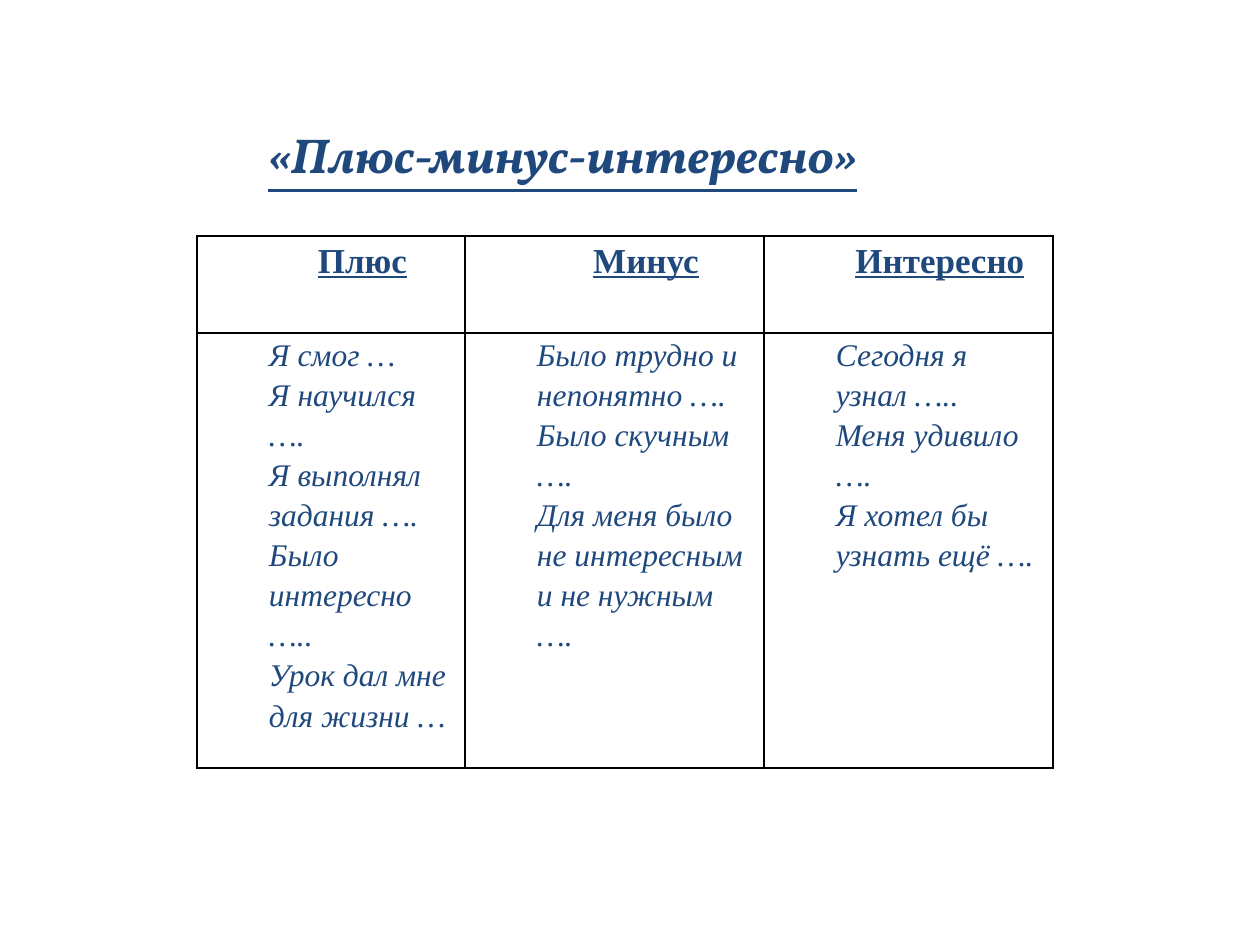
import pptx
import pptx.dml.color
import pptx.enum.text
import pptx.oxml
import pptx.oxml.ns
import pptx.util

PX = 914400 // 126
BLUE = "1F497D"
BLACK = "000000"
HEADERS = ["Плюс", "Минус", "Интересно"]
ANSWERS = [
    ["Я смог …", "Я научился ….", "Я выполнял задания ….",
     "Было интересно …..", "Урок дал мне для жизни …"],
    ["Было трудно и непонятно ….", "Было скучным ….",
     "Для меня было не интересным и не нужным …."],
    ["Сегодня я узнал …..", "Меня удивило ….", "Я хотел бы узнать ещё …."],
]
COLUMNS = [268, 299, 289]
ROWS = [97, 435]
TITLE_FONT = {"name": "Vollkorn", "size": pptx.util.Pt(28), "bold": True,
              "italic": True, "underline": True}
HEADER_FONT = {"name": "Times New Roman", "size": pptx.util.Pt(20),
               "bold": True, "italic": False, "underline": True}
ANSWER_FONT = {"name": "Times New Roman", "size": pptx.util.Pt(18),
               "bold": False, "italic": True, "underline": False}


def px(n):
    """Turn whole pixels into EMU."""
    return pptx.util.Emu(n * PX)


def color(value):
    """Turn a hex string into a colour."""
    return pptx.dml.color.RGBColor.from_string(value)


def set_format(target, values):
    """Set attributes of an object from a dict."""
    for name, value in values.items():
        setattr(target, name, value)


def add_run(p, text, font):
    """Add a blue run with the given font values."""
    r = p.add_run()
    r.text = text
    set_format(r.font, font)
    r.font.color.rgb = color(BLUE)


def add_title(s, text, x, y, w, h):
    """Add the title text box."""
    tf = s.shapes.add_textbox(px(x), px(y), px(w), px(h)).text_frame
    tf.word_wrap = True
    add_run(tf.paragraphs[0], text, TITLE_FONT)


def set_borders(cell):
    """Draw a thin black line on each side of a cell."""
    tcPr = cell._tc.get_or_add_tcPr()
    for i, side in enumerate(["lnL", "lnR", "lnT", "lnB"]):
        tcPr.insert(i, pptx.oxml.parse_xml(
            f'<a:{side} {pptx.oxml.ns.nsdecls("a")} w="12700"><a:solidFill>'
            f'<a:srgbClr val="{BLACK}"/></a:solidFill></a:{side}>'))


def fill_cell(cell, lines, font, align):
    """Write indented lines into a bordered cell without fill."""
    set_format(cell, {"margin_left": px(9), "margin_right": px(9),
                      "margin_top": 0, "margin_bottom": 0})
    cell.fill.background()
    set_borders(cell)
    tf = cell.text_frame
    for i, line in enumerate(lines):
        p = tf.add_paragraph() if i else tf.paragraphs[0]
        p._p.get_or_add_pPr().set("marL", str(px(63)))
        set_format(p, {"alignment": align, "line_spacing": 1.15})
        add_run(p, line, font)


def add_reflection_table(s, x, y):
    """Add the table of headers and unfinished sentences."""
    table = s.shapes.add_table(len(ROWS), len(COLUMNS), px(x), px(y),
                               px(sum(COLUMNS)), px(sum(ROWS))).table
    set_format(table, {"first_row": False, "horz_banding": False})
    for column, w in zip(table.columns, COLUMNS):
        column.width = px(w)
    for row, h in zip(table.rows, ROWS):
        row.height = px(h)
    align = pptx.enum.text.PP_ALIGN
    for i, (header, lines) in enumerate(zip(HEADERS, ANSWERS)):
        fill_cell(table.cell(0, i), [header], HEADER_FONT, align.CENTER)
        fill_cell(table.cell(1, i), lines, ANSWER_FONT, align.LEFT)


def main():
    """Build and save the slide."""
    prs = pptx.Presentation()
    set_format(prs, {"slide_width": px(1260), "slide_height": px(945)})
    s = prs.slides.add_slide(prs.slide_layouts[6])
    add_title(s, "«Плюс-минус-интересно»", 256, 118, 630, 111)
    add_reflection_table(s, 197, 236)
    prs.save("out.pptx")


if __name__ == "__main__":
    main()
